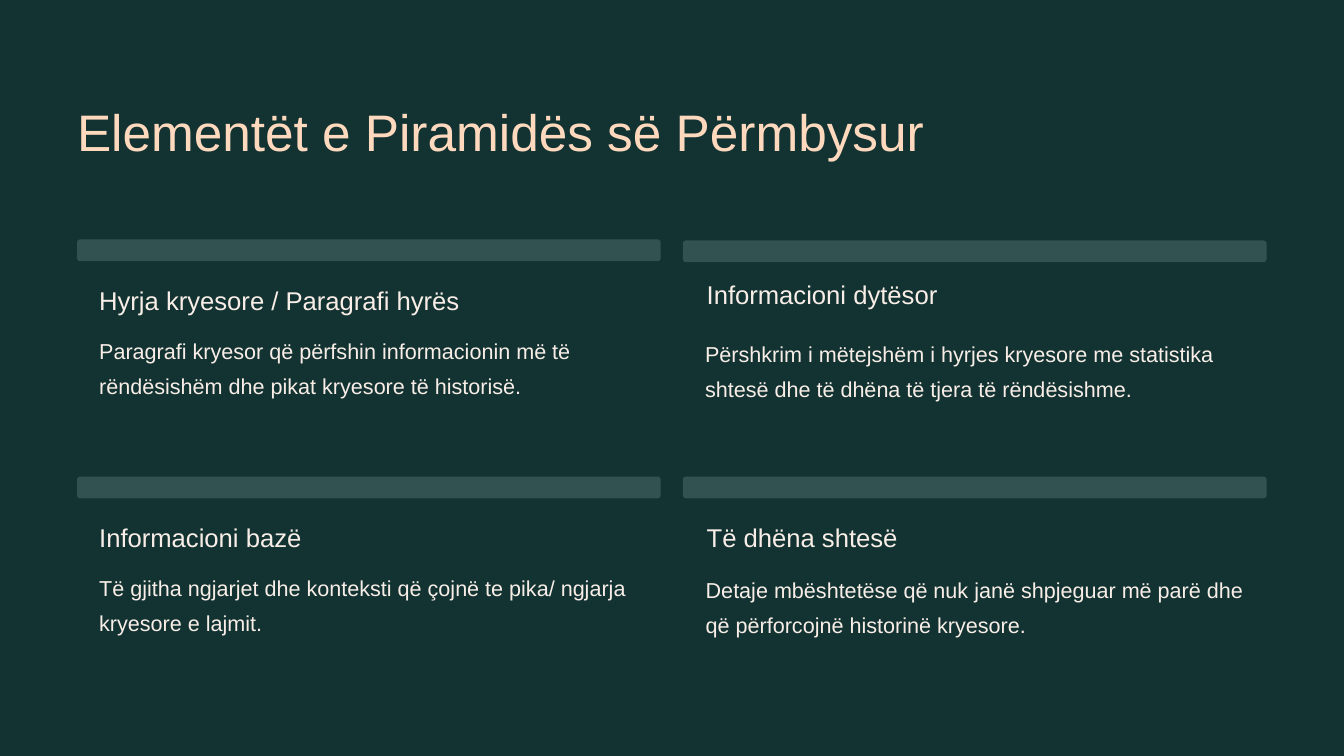
"""Build the slide on the four elements of the inverted pyramid."""
from pptx import Presentation
from pptx.dml.color import RGBColor
from pptx.enum.shapes import MSO_SHAPE as Preset
from pptx.util import Cm, Pt

CREAM = "F9EEE7"


def paint(fill, color):
    fill.solid()
    fill.fore_color.rgb = RGBColor.from_string(color)


def write(text, left, top, width, height, size, spacing, color):
    frame = slide.shapes.add_textbox(Cm(left), Cm(top), Cm(width), Cm(height)).text_frame
    frame.margin_left = frame.margin_top = frame.margin_right = frame.margin_bottom = 0
    frame.word_wrap = True
    frame.text = text
    line = frame.paragraphs[0]
    line.line_spacing = Pt(spacing)
    font = line.runs[0].font
    font.name = "Arial"
    font.size = Pt(size)
    paint(font.fill, color)


deck = Presentation()
deck.slide_width, deck.slide_height = Cm(40.64), Cm(22.86)
slide = deck.slides.add_slide(deck.slide_layouts[6])
paint(slide.background.fill, "123332")

write("Elementët e Piramidës së Përmbysur", 2.33, 2.95, 27, 1.96, 44, 55, "FFD9BE")

elements = [
    (2.33, 7.24, "Hyrja kryesore / Paragrafi hyrës", (3, 8.56, 12),
     "Paragrafi kryesor që përfshin informacionin më të rëndësishëm dhe pikat kryesore të historisë.",
     (3, 9.95)),
    (20.65, 7.27, "Informacioni dytësor", (21.37, 8.4, 8.18),
     "Përshkrim i mëtejshëm i hyrjes kryesore me statistika shtesë dhe të dhëna të tjera të rëndësishme.",
     (21.32, 10.04)),
    (2.33, 14.41, "Informacioni bazë", (3, 15.73, 8.69),
     "Të gjitha ngjarjet dhe konteksti që çojnë te pika/ ngjarja kryesore e lajmit.",
     (3, 17.12)),
    (20.65, 14.41, "Të dhëna shtesë", (21.37, 15.73, 8.13),
     "Detaje mbështetëse që nuk janë shpjeguar më parë dhe që përforcojnë historinë kryesore.",
     (21.34, 17.17)),
]

for left, top, heading, heading_place, description, description_place in elements:
    bar = slide.shapes.add_shape(Preset.ROUNDED_RECTANGLE, Cm(left), Cm(top), Cm(17.65), Cm(0.66))
    bar.adjustments[0] = 0.15
    bar.shadow.inherit = False
    bar.line.fill.background()
    paint(bar.fill, "315251")
    write(heading, *heading_place, 0.97, 22, 27.5, CREAM)
    write(description, *description_place, 16.33, 2.13, 18.5, 30, CREAM)

deck.save("out.pptx")
